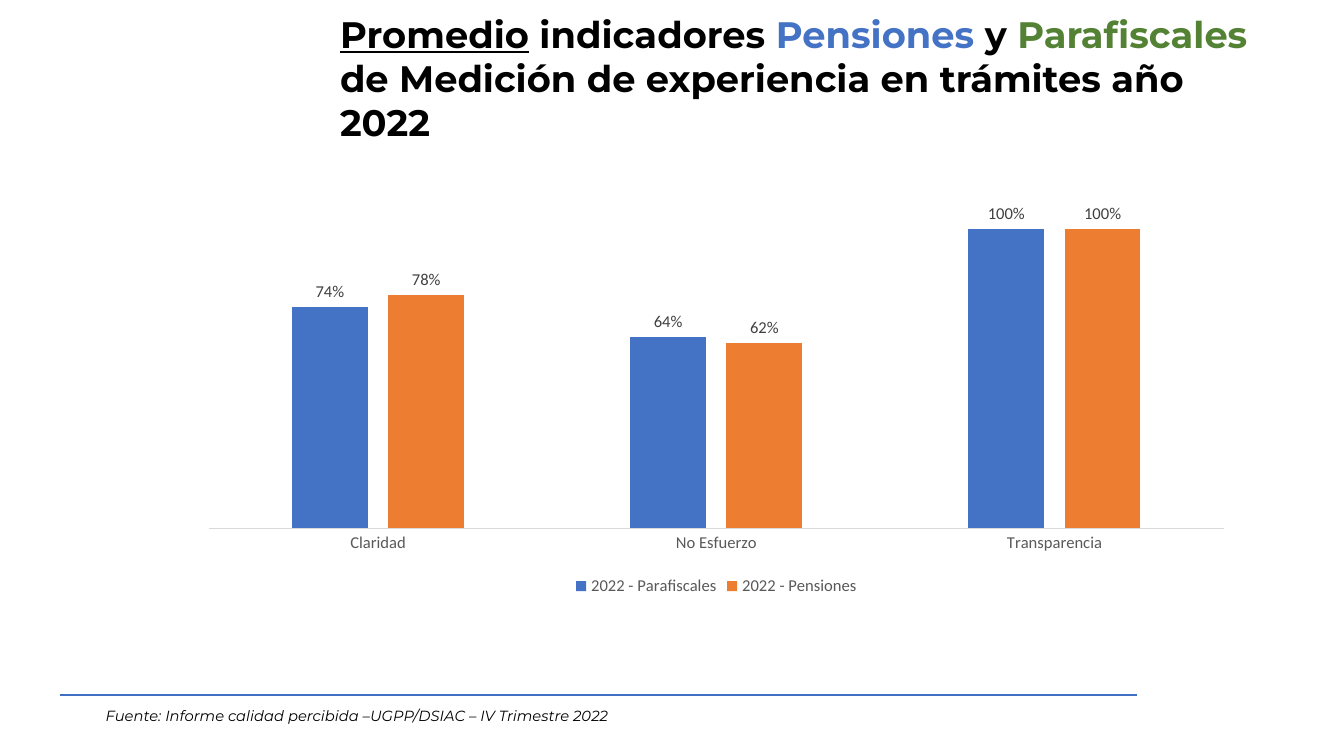
from lxml import etree
from pptx import Presentation
from pptx import util as u
from pptx.chart.data import CategoryChartData
from pptx.dml.color import RGBColor
from pptx.enum import chart as ch, shapes, text
from pptx.oxml import ns

Pt = u.Pt
BLACK = RGBColor(0, 0, 0)
BLUE = RGBColor(0x44, 0x72, 0xC4)
GREEN = RGBColor(0x54, 0x82, 0x35)
ORANGE = RGBColor(0xED, 0x7D, 0x31)
RULE = RGBColor(0x3F, 0x6F, 0xC3)
GRAY = RGBColor(0x59, 0x59, 0x59)
DARK = RGBColor(0x40, 0x40, 0x40)
PALE = RGBColor(0xD9, 0xD9, 0xD9)


def style(font, name, size, color):
    font.name = name
    font.size = Pt(size)
    font.color.rgb = color


def add_text(slide, box, size, runs, bold=False, slant=False):
    frame = slide.shapes.add_textbox(*map(Pt, box)).text_frame
    frame.word_wrap = True
    frame.auto_size = text.MSO_AUTO_SIZE.SHAPE_TO_FIT_TEXT
    for words, color, under in runs:
        run = frame.paragraphs[0].add_run()
        run.text = words
        style(run.font, "Montserrat", size, color)
        run.font.bold = bold
        run.font.italic = slant
        run.font.underline = under


def add_title(slide, box):
    add_text(slide, box, 20, [
        ("Promedio", BLACK, True),
        (" indicadores", BLACK, False),
        (" Pensiones ", BLUE, False),
        ("y ", BLACK, False),
        ("Parafiscales", GREEN, False),
        (" de Medición de experiencia en trámites año 2022", BLACK, False),
    ], bold=True)


def add_bars(slide, box):
    data = CategoryChartData(number_format="0%")
    data.categories = ["Claridad", "No Esfuerzo", "Transparencia"]
    data.add_series("2022 - Parafiscales", [0.74, 0.64, 1])
    data.add_series("2022 - Pensiones", [0.78, 0.62, 1])
    kind = ch.XL_CHART_TYPE.COLUMN_CLUSTERED
    chart = slide.shapes.add_chart(kind, *map(Pt, box), data).chart
    style(chart.font, "Calibri", 10, BLACK)
    chart.has_title = False
    chart.has_legend = True
    chart.legend.position = ch.XL_LEGEND_POSITION.BOTTOM
    chart.legend.include_in_layout = False
    style(chart.legend.font, "Calibri", 9, GRAY)

    cats = chart.category_axis
    cats.major_tick_mark = ch.XL_TICK_MARK.NONE
    cats.format.line.color.rgb = PALE
    cats.format.line.width = Pt(0.75)
    style(cats.tick_labels.font, "Calibri", 9, GRAY)
    vals = chart.value_axis
    vals.minimum_scale = 0
    vals.maximum_scale = 1.2
    vals.has_major_gridlines = False
    vals.visible = False

    plot = chart.plots[0]
    plot.vary_by_categories = False
    plot.gap_width = 219
    plot.overlap = -27
    for bars, color in zip(plot.series, (BLUE, ORANGE)):
        bars.format.fill.solid()
        bars.format.fill.fore_color.rgb = color
        tags = bars.data_labels
        tags.show_value = True
        tags.number_format = "0%"
        tags.number_format_is_linked = False
        tags.position = ch.XL_LABEL_POSITION.OUTSIDE_END
        style(tags.font, "Calibri", 9, DARK)


def add_foot(slide, box):
    left, top, width, height = box
    line = slide.shapes.add_connector(
        shapes.MSO_CONNECTOR.STRAIGHT,
        Pt(left), Pt(top), Pt(left + width), Pt(top))
    line.line.color.rgb = RULE
    line.line.width = Pt(0.75)
    etree.SubElement(line._element.spPr, ns.qn("a:effectLst"))
    note = "Fuente: Informe calidad percibida –UGPP/DSIAC – IV Trimestre 2022"
    add_text(slide, (left + 18, top + 2.9, 466.5, height - 2.9), 8,
             [(note, BLACK, False)], slant=True)


def main():
    deck = Presentation()
    deck.slide_width = Pt(730.8)
    deck.slide_height = Pt(411.1)
    slide = deck.slides.add_slide(deck.slide_layouts[6])
    add_title(slide, (177.8, 2.9, 510.5, 54.7))
    add_foot(slide, (32.4, 378, 586.1, 20.2))
    add_bars(slide, (102.2, 87.1, 574.6, 239.8))
    deck.save("out.pptx")


if __name__ == "__main__":
    main()
